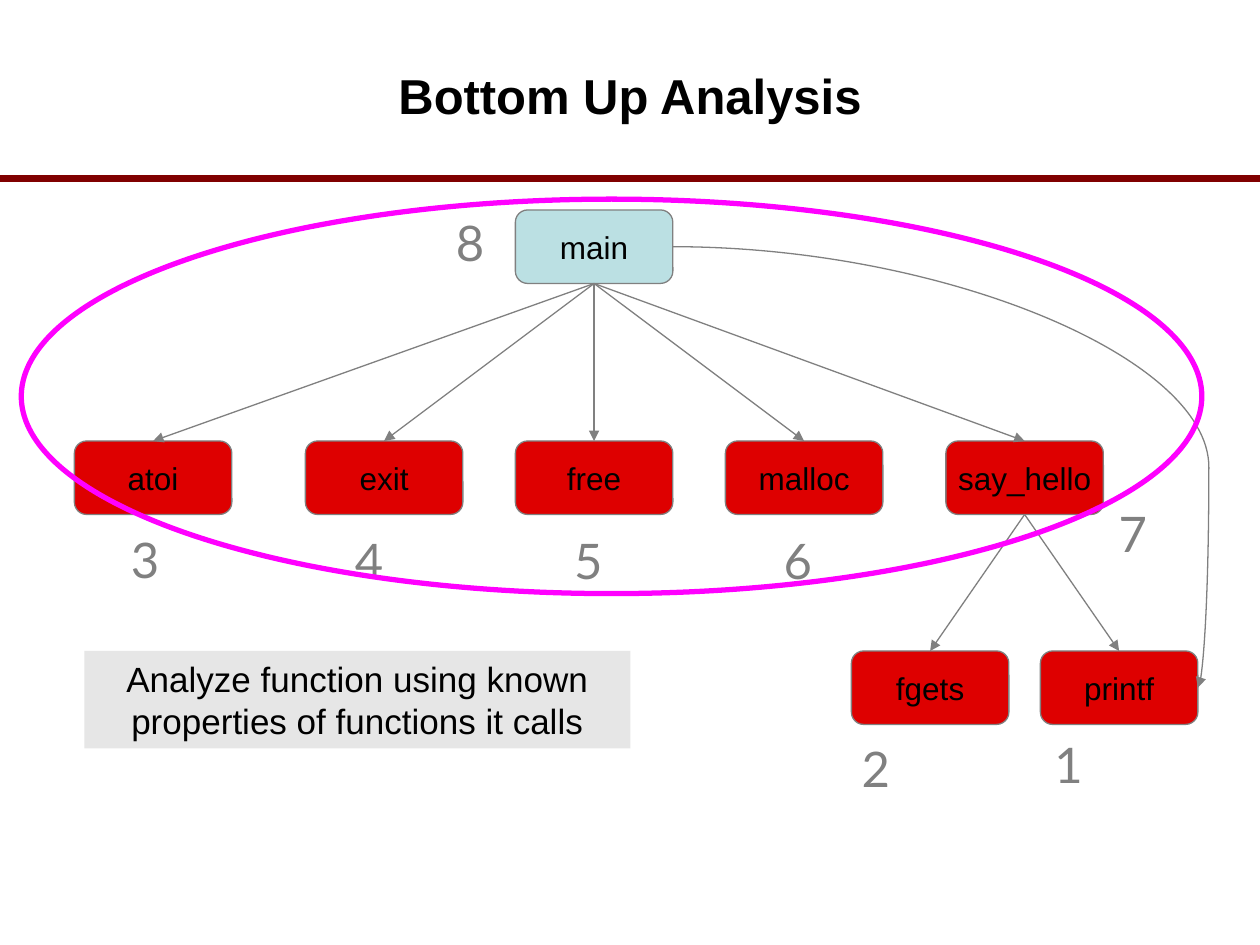
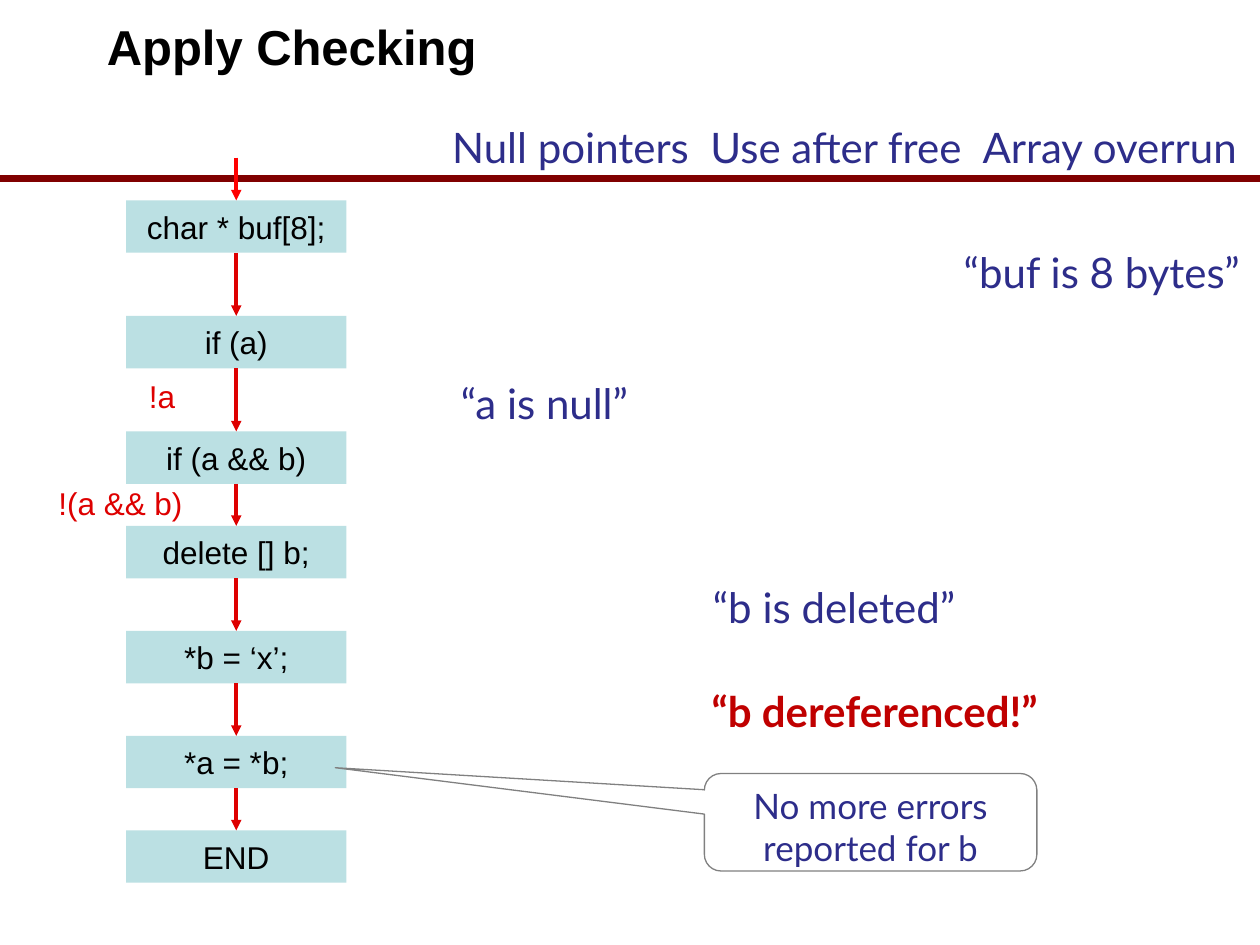
from dataclasses import dataclass
from lxml.etree import SubElement
from pptx import Presentation
from pptx.dml.color import RGBColor as RGB
from pptx.enum.shapes import MSO_CONNECTOR as Link, MSO_SHAPE as Shape
from pptx.enum.text import MSO_ANCHOR as Anchor, MSO_AUTO_SIZE as Fit, PP_ALIGN as Align
from pptx.oxml.ns import qn
from pptx.util import Pt

TOP, LEFT, BOTTOM, RIGHT = range(4)  # connection sites of a rectangle


@dataclass(frozen=True)
class Theme:
    black: str = "000000"
    white: str = "FFFFFF"
    rule: str = "800000"
    gray: str = "808080"
    caption: str = "E6E6E6"
    red: str = "DE0000"
    entry: str = "FF0000"
    blue: str = "BBE0E3"
    navy: str = "2D2D8A"
    error: str = "C00000"
    ring: str = "FF00FF"
    sans: str = "Arial"
    accent: str = "Lato"
    title_size: int = 28
    order_size: int = 28
    note_size: int = 24
    caption_size: int = 20
    label_size: int = 18
    hairline: float = 0.75
    hanging: int = 27


THEME = Theme()


# Shared helpers
def write(shape, lines, size, color, font=THEME.sans, bold=None, align=Align.CENTER,
          anchor=Anchor.TOP, wrap=False, grow=False, hanging=False):
    frame = shape.text_frame
    frame.word_wrap = wrap
    frame.vertical_anchor = anchor
    frame.auto_size = Fit.SHAPE_TO_FIT_TEXT if grow else Fit.NONE
    for index, line in enumerate(lines):
        paragraph = frame.add_paragraph() if index else frame.paragraphs[0]
        paragraph.alignment = align
        if hanging:
            properties = paragraph._p.get_or_add_pPr()
            properties.set("marL", str(Pt(THEME.hanging)))
            properties.set("indent", str(-Pt(THEME.hanging)))
        run = paragraph.add_run()
        run.text = line
        run.font.name, run.font.size, run.font.bold = font, Pt(size), bold
        run.font.color.rgb = RGB.from_string(color)


def add_label(slide, box, line, size, color, **style):
    label = slide.shapes.add_textbox(*map(Pt, box))
    write(label, [line], size, color, **style)


def add_block(slide, kind, box, fill=None, line=None, width=THEME.hairline):
    block = slide.shapes.add_shape(kind, *map(Pt, box))
    block.shadow.inherit = False
    if fill:
        block.fill.solid()
        block.fill.fore_color.rgb = RGB.from_string(fill)
    else:
        block.fill.background()
    if line:
        block.line.color.rgb = RGB.from_string(line)
        block.line.width = Pt(width)
    else:
        block.line.fill.background()
    return block


def add_link(slide, color, width, points=(0, 0, 0, 0), begin=None, end=None,
             kind=Link.STRAIGHT, arrow=True):
    link = slide.shapes.add_connector(kind, *map(Pt, points))
    if begin:
        link.begin_connect(*begin)
    if end:
        link.end_connect(*end)
    link.line.color.rgb = RGB.from_string(color)
    link.line.width = Pt(width)
    properties = link._element.spPr
    if arrow:
        SubElement(properties.find(qn("a:ln")), qn("a:tailEnd"), type="triangle")
    SubElement(properties, qn("a:effectLst"))
    return link


def start_slide(deck, title, align, anchor):
    slide = deck.slides.add_slide(deck.slide_layouts[6])
    add_link(slide, THEME.rule, 4, (0, 102, 720, 102), arrow=False)
    add_label(slide, (54, 6, 612, 96), title, THEME.title_size, THEME.black,
              bold=True, align=align, anchor=anchor, wrap=True)
    return slide


# Bottom Up Analysis
def draw_call_graph(slide, left, top):
    # name: column, row, order of analysis, offset of the order from the node
    functions = {
        "atoi": (0, 132, "3", 25.2, 46.8),
        "main": (252, 0, "8", -41, -2),
        "exit": (132, 132, "4", 21.3, 47.5),
        "free": (252, 132, "5", 26.5, 47.5),
        "malloc": (372, 132, "6", 26.2, 47.5),
        "printf": (552, 252, "1", 1, 44.2),
        "fgets": (444, 252, "2", -1.2, 46.3),
        "say_hello": (498, 132, "7", 91.7, 32.4),
    }
    calls = {
        "main": ("atoi", "exit", "free", "malloc", "say_hello"),
        "say_hello": ("fgets", "printf"),
    }
    nodes = {}
    for name, (x, y, *_) in functions.items():
        fill = THEME.blue if name == "main" else THEME.red
        nodes[name] = add_block(slide, Shape.ROUNDED_RECTANGLE,
                                (left + x, top + y, 90, 42), fill, THEME.gray)
        write(nodes[name], [name], THEME.label_size, THEME.black, anchor=Anchor.MIDDLE)

    # Calls to the next row, then the long way from main to printf
    for caller, callees in calls.items():
        for callee in callees:
            add_link(slide, THEME.gray, THEME.hairline,
                     begin=(nodes[caller], BOTTOM), end=(nodes[callee], TOP))
    detour = add_link(slide, THEME.gray, THEME.hairline, begin=(nodes["main"], RIGHT),
                      end=(nodes["printf"], RIGHT), kind=Link.CURVE)
    bends = detour._element.spPr.find(qn("a:prstGeom")).get_or_add_avLst()
    SubElement(bends, qn("a:gd"), name="adj1", fmla="val 102100")

    # Order of analysis
    for name, (x, y, order, dx, dy) in functions.items():
        add_label(slide, (left + x + dx, top + y + dy, 28.8, 41), order,
                  THEME.order_size, THEME.gray, font=THEME.accent, grow=True, hanging=True,
                  align=Align.LEFT if name == "fgets" else Align.CENTER)

    # Ring around main and its callees
    add_block(slide, Shape.OVAL, (left - 30.3, top - 6.2, 674.6, 225.4),
              line=THEME.ring, width=3)


def draw_caption(slide, box):
    caption = add_block(slide, Shape.RECTANGLE, box, THEME.caption)
    write(caption, ["Analyze function using known properties of functions it calls"],
          THEME.caption_size, THEME.black, wrap=True, grow=True)


def build_bottom_up(deck):
    slide = start_slide(deck, "Bottom Up Analysis", Align.CENTER, Anchor.MIDDLE)
    draw_call_graph(slide, 42.5, 120)
    draw_caption(slide, (48.2, 372, 312, 55.7))


# Apply Checking
def draw_code_path(slide, left, top, width=126, height=30):
    statements = (
        ("char * buf[8];", 0), ("if (a)", 66), ("if (a && b)", 132),
        ("delete [] b;", 186), ("*b = ‘x’;", 246), ("*a = *b;", 306), ("END", 360),
    )
    steps = []
    for statement, y in statements:
        step = add_block(slide, Shape.RECTANGLE, (left, top + y, width, height), THEME.blue)
        write(step, [statement], THEME.label_size, THEME.black, anchor=Anchor.MIDDLE)
        steps.append(step)

    # Entry arrow and flow between statements
    middle = left + width / 2
    add_link(slide, THEME.entry, 2, (middle, top - 24.5, middle, top), end=(steps[0], TOP))
    for step, following in zip(steps, steps[1:]):
        add_link(slide, THEME.red, 2, begin=(step, BOTTOM), end=(following, TOP))

    # Branch conditions
    for condition, x, y, span in (("!a", 5.8, 97.2, 29.5), ("!(a && b)", -46, 158.4, 85.7)):
        add_label(slide, (left + x, top + y, span, 29), condition,
                  THEME.label_size, THEME.red, grow=True)


def draw_checkers(slide, left, top):
    findings = (
        ("Null pointers", 0, 0, 154), ("Use after free", 147.6, 0, 167),
        ("Array overrun", 303.1, 0, 163.4), ("“buf is 8 bytes”", 292.3, 71.3, 185.8),
        ("“a is null”", 5, 146.2, 125.3), ("“b is deleted”", 149, 262.8, 168.5),
        ("“b dereferenced!”", 148.3, 321.8, 227.5),
    )
    for finding, x, y, width in findings:
        is_error = finding.endswith("!”")
        add_label(slide, (left + x, top + y, width, 36), finding, THEME.note_size,
                  THEME.error if is_error else THEME.navy, font=THEME.accent,
                  bold=is_error, align=Align.LEFT, grow=True, hanging=True)


def draw_callout(slide, box):
    callout = add_block(slide, Shape.ROUNDED_RECTANGULAR_CALLOUT, box,
                        THEME.white, THEME.gray)
    for index, value in enumerate((-1.61, -0.56, 0.17)):
        callout.adjustments[index] = value
    write(callout, ["No more errors", "reported for b"], THEME.caption_size, THEME.navy,
          font=THEME.accent, wrap=True, hanging=True)


def build_apply_checking(deck):
    slide = start_slide(deck, "Apply Checking", Align.LEFT, Anchor.TOP)
    draw_code_path(slide, 72, 114.5)
    draw_checkers(slide, 251.3, 66.2)
    draw_callout(slide, (402.5, 442, 190, 55.7))


def main():
    deck = Presentation()
    deck.slide_width, deck.slide_height = Pt(720), Pt(540)
    build_bottom_up(deck)
    build_apply_checking(deck)
    deck.save("out.pptx")


if __name__ == "__main__":
    main()
